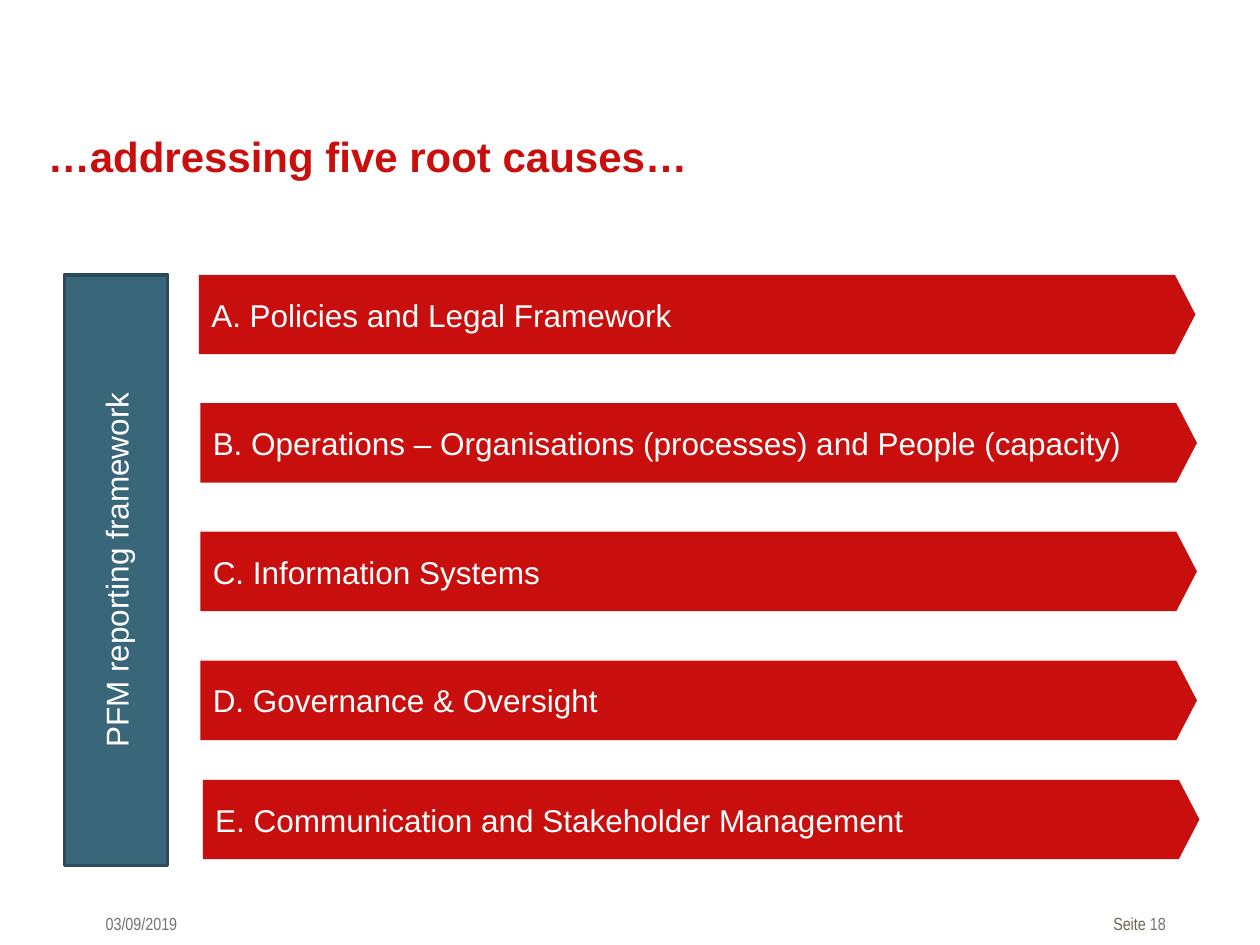
from pptx import Presentation
from pptx.dml.color import RGBColor as Rgb
from pptx.enum.shapes import MSO_SHAPE as Kind
from pptx.enum.text import MSO_ANCHOR as Anchor, MSO_AUTO_SIZE as Fit, PP_ALIGN as Align
from pptx.util import Cm, Pt

RED, TEAL, EDGE, WHITE = "C80F0E", "3A667A", "2B4B5A", "FFFFFF"
GREY, BROWN = "727272", "6E6452"
HEAD = {"name": "Arial", "size": Pt(24), "bold": True}
BODY = {"name": "Arial", "size": Pt(18), "bold": False}
FOOT = {"name": "Arial Narrow", "size": Pt(10), "bold": False}


def color(code):
    return Rgb.from_string(code)


def apply(item, form):
    for key, value in form.items():
        setattr(item, key, value)


class Deck:
    def __init__(self, slide):
        self.slide = slide

    def fill_text(self, frame, runs, font, align, anchor):
        apply(frame, {"word_wrap": True, "auto_size": Fit.NONE,
                      "vertical_anchor": anchor})
        para = frame.paragraphs[0]
        para.alignment = align
        for text, tint in runs:
            run = para.add_run()
            run.text = text
            apply(run.font, font)
            run.font.color.rgb = color(tint)

    def title(self, text, box):
        head = self.slide.shapes.title
        apply(head, dict(zip(("left", "top", "width", "height"), map(Cm, box))))
        self.fill_text(head.text_frame, [(text, RED)], HEAD, Align.LEFT, Anchor.TOP)

    def label(self, runs, box, align=Align.LEFT, form={}):
        frame = self.slide.shapes.add_textbox(*map(Cm, box)).text_frame
        apply(frame, form)
        self.fill_text(frame, runs, FOOT, align, Anchor.TOP)

    def plate(self, text, box, fill, point, align=Align.LEFT):
        shape = self.slide.shapes.add_shape(Kind.PENTAGON, *map(Cm, box))
        shape.adjustments[0] = point
        shape.shadow.inherit = False
        shape.fill.solid()
        shape.fill.fore_color.rgb = color(fill)
        shape.line.fill.background()
        self.fill_text(shape.text_frame, [(text, WHITE)], BODY, align, Anchor.MIDDLE)
        return shape

    def pillar(self, text, box):
        shape = self.plate(text, box, TEAL, 0, Align.CENTER)
        shape.line.color.rgb = color(EDGE)
        shape.line.width = Pt(2)
        shape.text_frame._txBody.bodyPr.set("vert", "vert270")


def main():
    show = Presentation()
    apply(show, {"slide_width": Cm(25.4), "slide_height": Cm(19.05)})
    deck = Deck(show.slides.add_slide(show.slide_layouts[5]))
    deck.title("…addressing five root causes…", (0.71, 2.51, 21.59, 2.77))
    deck.label([("Seite ", BROWN), ("18", GREY)], (20.93, 18.29, 2.57, 0.69),
               Align.RIGHT, {"margin_right": 0})
    deck.label([("03/09/2019", GREY)], (1.88, 18.29, 3.61, 0.69))
    deck.pillar("PFM reporting framework", (1.3, 5.54, 2.08, 11.91))
    causes = [
        ("A. Policies and Legal Framework", 4.01, 5.54),
        ("B. Operations – Organisations (processes) and People (capacity)", 4.04, 8.13),
        ("C. Information Systems", 4.04, 10.72),
        ("D. Governance & Oversight", 4.04, 13.32),
        ("E. Communication and Stakeholder Management", 4.09, 15.72),
    ]
    for text, left, top in causes:
        deck.plate(text, (left, top, 20.09, 1.6), RED, 0.26)
    show.save("out.pptx")


if __name__ == "__main__":
    main()
